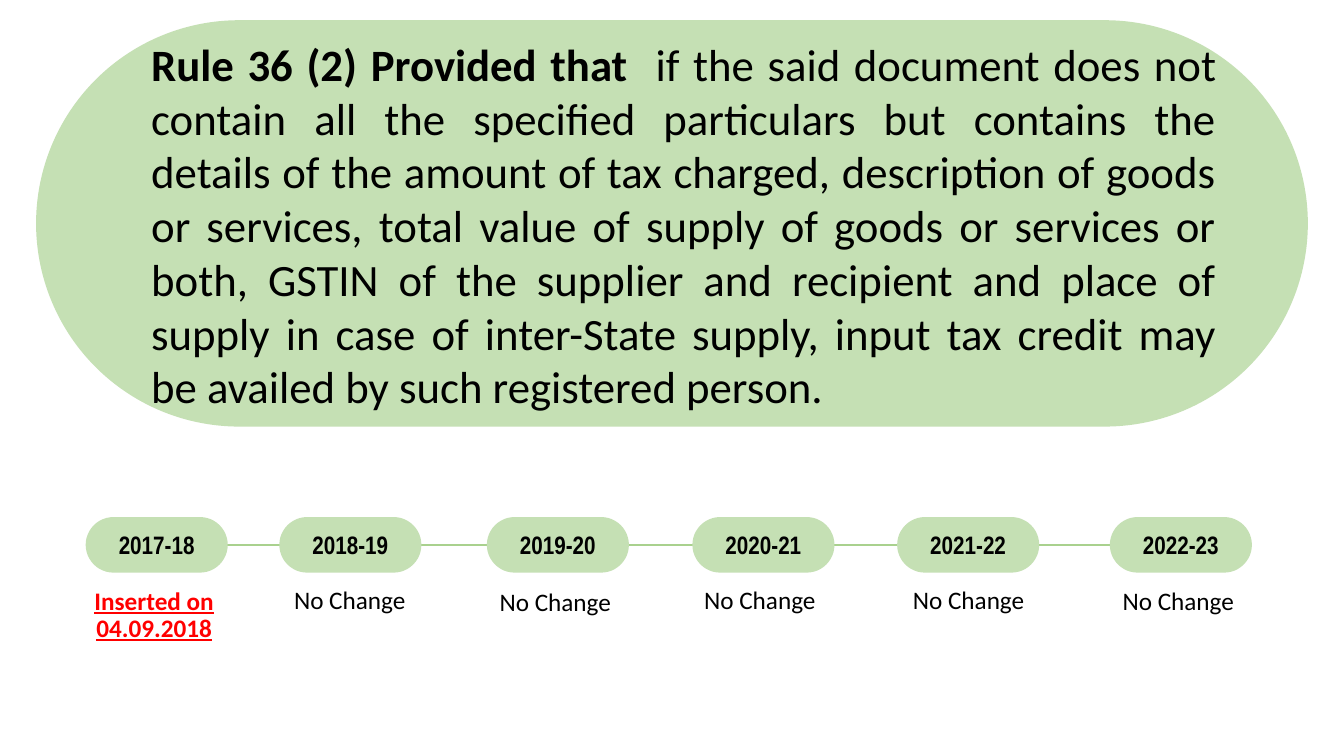
from pptx import Presentation
from pptx.dml.color import RGBColor
from pptx.enum import shapes, text
from pptx.oxml.ns import qn
from pptx.util import Cm, Pt
from lxml import etree

# Content
RULE = [[
    ("Rule 36 (2) Provided that  ", True),
    ("if the said document does not contain all the specified particulars "
     "but contains the details of the amount of tax charged, description of "
     "goods or services, total value of supply of goods or services or both, "
     "GSTIN of the supplier and recipient and place of supply in case of "
     "inter-State supply, input tax credit may be availed by such registered "
     "person.", False),
]]
SAME = ["No Change"]
# year, pill left, note lines, note left, note top, note width (cm)
YEARS = [
    ("2017-18", 2.16, ["Inserted on", "04.09.2018"], 1.98, 14.58, 3.81),
    ("2018-19", 7.04, SAME, 6.91, 14.55, 3.81),
    ("2019-20", 12.27, SAME, 12.09, 14.6, 3.81),
    ("2020-21", 17.45, SAME, 16.56, 14.55, 5.18),
    ("2021-22", 22.61, SAME, 21.82, 14.55, 5.18),
    ("2022-23", 27.97, SAME, 27.79, 14.58, 3.81),
]

# Style
BLACK = RGBColor(0x00, 0x00, 0x00)
RED = RGBColor(0xFF, 0x00, 0x00)
PALE = RGBColor(0xC5, 0xE0, 0xB4)
GREEN = RGBColor(0xA9, 0xD1, 0x8E)
MID = text.PP_ALIGN.CENTER
PILL_W, PILL_H, PILL_Y = 3.58, 1.4, 13.03
NOTE_H = 1.73

deck = Presentation()
deck.slide_width, deck.slide_height = Cm(33.87), Cm(19.05)
slide = deck.slides.add_slide(deck.slide_layouts[6])


def write(shape, lines, size=18, font="Calibri", color=BLACK, align=MID,
          under=False, gap=None, pad=0.25, anchor=text.MSO_ANCHOR.TOP):
    """Each line is a list of (words, bold) runs."""
    frame = shape.text_frame
    frame.word_wrap = True
    frame.vertical_anchor = anchor
    frame.margin_left = frame.margin_right = Cm(0.25)
    frame.margin_top = frame.margin_bottom = Cm(pad)
    for i, line in enumerate(lines):
        para = frame.add_paragraph() if i else frame.paragraphs[0]
        para.alignment = align
        if gap:
            para.line_spacing = gap
        for words, bold in line:
            run = para.add_run()
            run.text = words
            face = run.font
            face.name, face.size, face.bold = font, Pt(size), bold
            face.color.rgb = color
            if under:
                face.underline = True


def box(x, y, w, h):
    return slide.shapes.add_textbox(Cm(x), Cm(y), Cm(w), Cm(h))


def pill(x, y, w, h):
    shape = slide.shapes.add_shape(
        shapes.MSO_SHAPE.ROUNDED_RECTANGLE, Cm(x), Cm(y), Cm(w), Cm(h))
    shape.adjustments[0] = 0.5
    shape.shadow.inherit = False
    shape.fill.solid()
    shape.fill.fore_color.rgb = PALE
    shape.line.fill.background()
    return shape


# Rule panel
pill(0.91, 0.51, 32.05, 10.24)
rule = box(3.56, 0.79, 27.36, 9.83)
write(rule, RULE, size=32, align=text.PP_ALIGN.JUSTIFY, pad=0.13)
rule.text_frame.auto_size = text.MSO_AUTO_SIZE.SHAPE_TO_FIT_TEXT

# Timeline line, behind the years
axis = PILL_Y + PILL_H / 2
line = slide.shapes.add_connector(
    shapes.MSO_CONNECTOR.STRAIGHT, Cm(4.27), Cm(axis), Cm(31.09), Cm(axis))
line.line.color.rgb = GREEN
line.line.width = Pt(1.5)
etree.SubElement(line._element.spPr, qn("a:effectLst"))

# Years and their notes
for year, x, note, left, top, wide in YEARS:
    write(pill(x, PILL_Y, PILL_W, PILL_H), [[(year, True)]],
          font="Arial Narrow", anchor=text.MSO_ANCHOR.MIDDLE)
    new = note is not SAME
    write(box(left, top, wide, NOTE_H), [[(words, new)] for words in note],
          color=RED if new else BLACK, under=new, gap=0.9)

deck.save("out.pptx")
